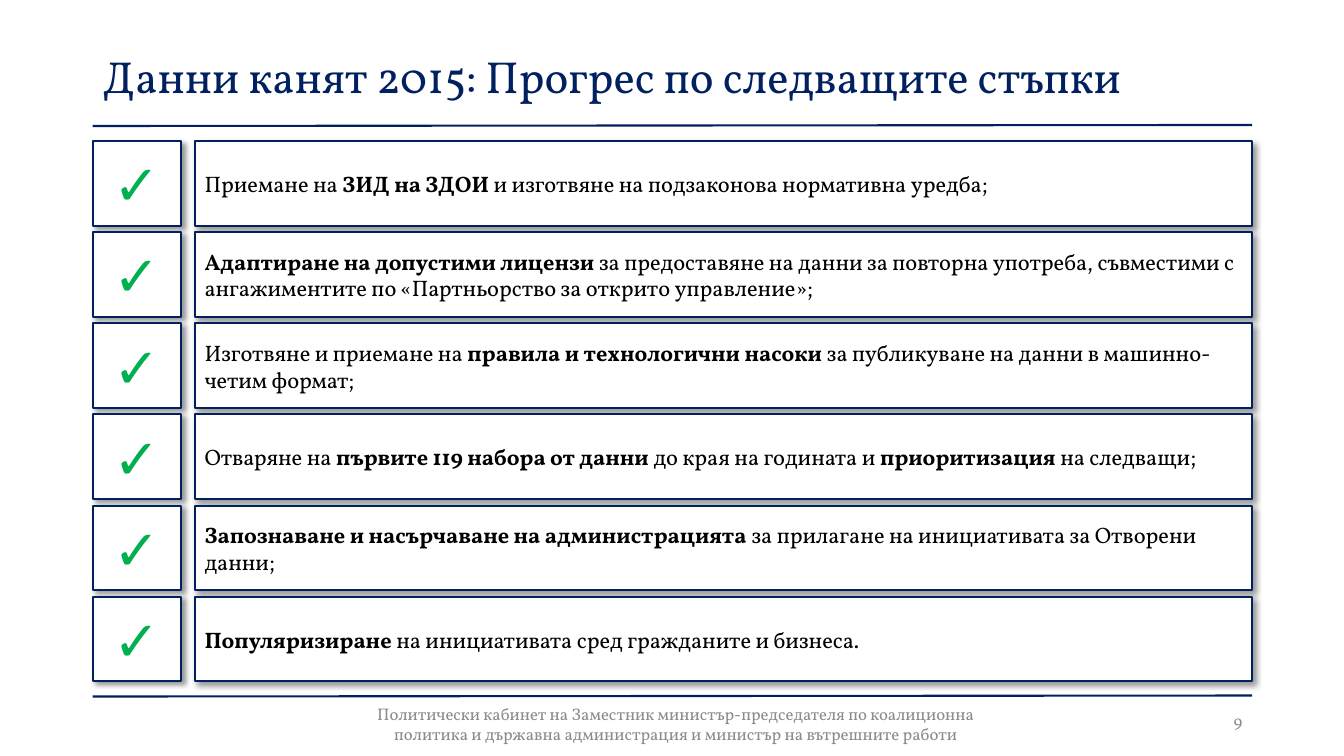
import pptx
import pptx.util
import pptx.dml.color
import pptx.enum.shapes
import pptx.enum.text
import pptx.oxml
import pptx.oxml.ns

Inches, Pt = pptx.util.Inches, pptx.util.Pt
RGBColor = pptx.dml.color.RGBColor
ALIGN = pptx.enum.text.PP_ALIGN
ANCHOR = pptx.enum.text.MSO_ANCHOR
SHAPE = pptx.enum.shapes.MSO_SHAPE

NAVY = RGBColor(0x00, 0x20, 0x60)
GREEN = RGBColor(0x00, 0xB0, 0x50)
GREY = RGBColor(0x8B, 0x8B, 0x8B)
BLACK = RGBColor(0, 0, 0)
WHITE = RGBColor(0xFF, 0xFF, 0xFF)
FONT = "Vollkorn"

WIDTH, HEIGHT = 13.33, 7.5
LEFT, CONTENT_W = 0.92, 11.5
ROW_H, ROW_PITCH = 0.84, 0.904
CHECK_W, GUTTER = 0.88, 0.13

STEPS = [
    [("Приемане на ", False), ("ЗИД на ЗДОИ ", True),
     ("и изготвяне на подзаконова нормативна уредба;", False)],
    [("Адаптиране на допустими лицензи ", True),
     ("за предоставяне на данни за повторна употреба, съвместими с "
      "ангажиментите по «Партньорство за открито управление»;", False)],
    [("Изготвяне и приемане на ", False), ("правила и технологични насоки ", True),
     ("за публикуване на данни в машинно-четим формат;", False)],
    [("Отваряне на ", False), ("първите 119 набора от данни ", True),
     ("до края на годината и ", False), ("приоритизация ", True),
     ("на следващи;", False)],
    [("Запознаване и насърчаване на администрацията ", True),
     ("за прилагане на инициативата за Отворени данни;", False)],
    [("Популяризиране", True),
     (" на инициативата сред гражданите и бизнеса.", False)],
]

SHADOW = (
    '<a:effectLst %s><a:outerShdw blurRad="%d" dist="%d" dir="2700000" algn="tl" '
    'rotWithShape="0"><a:srgbClr val="000000"><a:alpha val="40000"/></a:srgbClr>'
    '</a:outerShdw></a:effectLst>'
    % (pptx.oxml.ns.nsdecls("a"), Pt(4), Pt(3))
)


def write(sp, runs, size, color, align=ALIGN.LEFT):
    tf = sp.text_frame
    tf.word_wrap = True
    tf.auto_size = pptx.enum.text.MSO_AUTO_SIZE.NONE
    tf.vertical_anchor = ANCHOR.MIDDLE
    p = tf.paragraphs[0]
    p.alignment = align
    for text, bold in runs:
        r = p.add_run()
        r.text = text
        r.font.name = FONT
        r.font.size = Pt(size)
        r.font.bold = bold
        r.font.color.rgb = color


def add_title(s, x, y, w, h):
    sp = s.shapes.title
    sp.left, sp.top, sp.width, sp.height = map(Inches, (x, y, w, h))
    write(sp, [("Данни канят 2015: Прогрес по следващите стъпки", False)], 32, NAVY)


def add_rule(s, x, y, w):
    line = s.shapes.add_connector(
        pptx.enum.shapes.MSO_CONNECTOR.STRAIGHT,
        Inches(x), Inches(y), Inches(x + w), Inches(y - 0.01))
    line.line.color.rgb = NAVY
    line.line.width = Pt(1.5)
    line._element.spPr.append(
        pptx.oxml.parse_xml("<a:effectLst %s/>" % pptx.oxml.ns.nsdecls("a")))


def add_card(s, x, y, w, h):
    sp = s.shapes.add_shape(SHAPE.RECTANGLE, *map(Inches, (x, y, w, h)))
    sp.fill.solid()
    sp.fill.fore_color.rgb = WHITE
    sp.line.color.rgb = NAVY
    sp.line.width = Pt(1.5)
    sp._element.spPr.append(pptx.oxml.parse_xml(SHADOW))
    return sp


def add_steps(s, x, y, w):
    text_x = CHECK_W + GUTTER
    for i, runs in enumerate(STEPS):
        top = y + i * ROW_PITCH
        check = add_card(s, x, top, CHECK_W, ROW_H)
        write(check, [("✓", False)], 40, GREEN, ALIGN.CENTER)
        step = add_card(s, x + text_x, top, w - text_x, ROW_H)
        write(step, runs, 16, BLACK)


def add_footer(s, x, y, w, h):
    office = s.shapes.add_textbox(*map(Inches, (3.4, y + 0.03, 6.61, h)))
    write(office, [("Политически кабинет на Заместник министър-председателя по "
                    "коалиционна политика и държавна администрация и министър "
                    "на вътрешните работи", False)], 12, GREY, ALIGN.CENTER)
    number = s.shapes.add_textbox(*map(Inches, (x + w - 3, y, 3, h)))
    write(number, [("9", False)], 12, GREY, ALIGN.RIGHT)


def main():
    prs = pptx.Presentation()
    prs.slide_width, prs.slide_height = Inches(WIDTH), Inches(HEIGHT)
    s = prs.slides.add_slide(prs.slide_layouts[5])
    add_rule(s, LEFT, 1.25, CONTENT_W)
    add_rule(s, LEFT, 6.91, CONTENT_W)
    add_title(s, LEFT, 0.4, CONTENT_W, 0.69)
    add_steps(s, LEFT, 1.4, CONTENT_W)
    add_footer(s, LEFT, 6.95, CONTENT_W, 0.4)
    prs.save("out.pptx")


if __name__ == "__main__":
    main()
